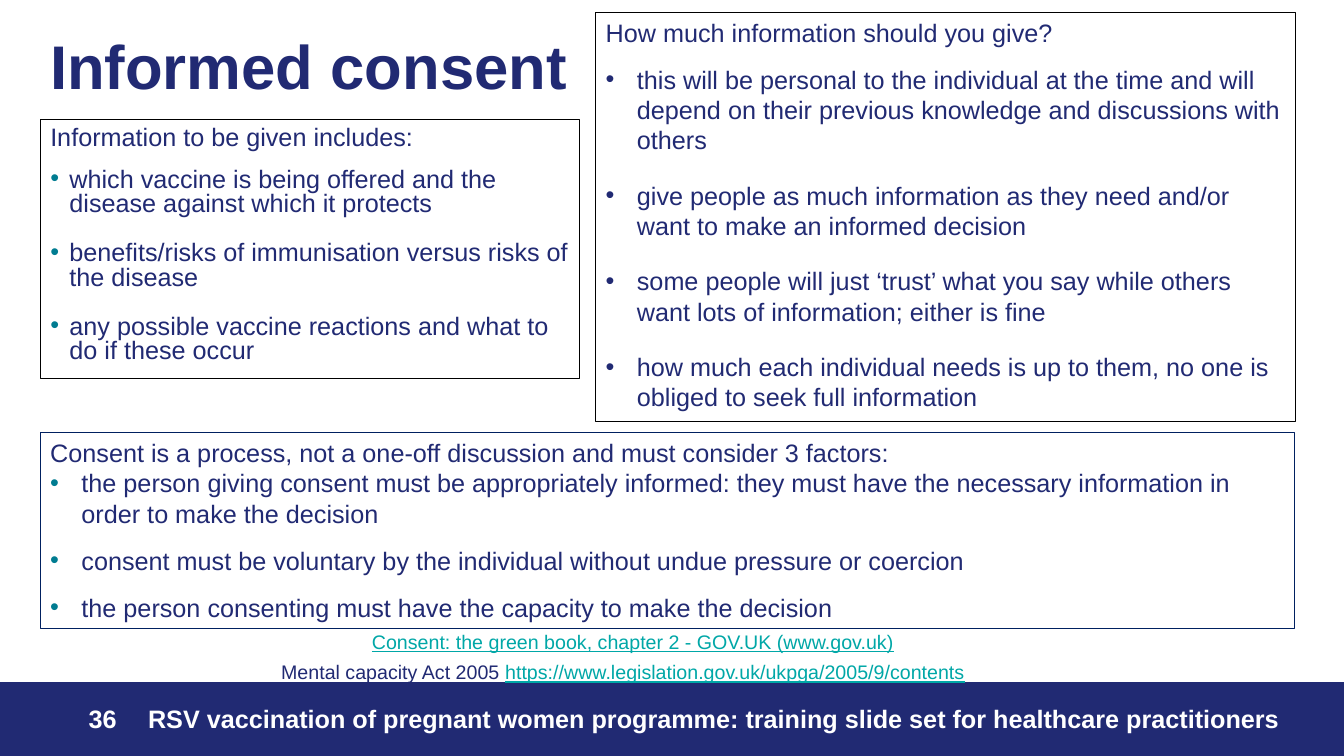
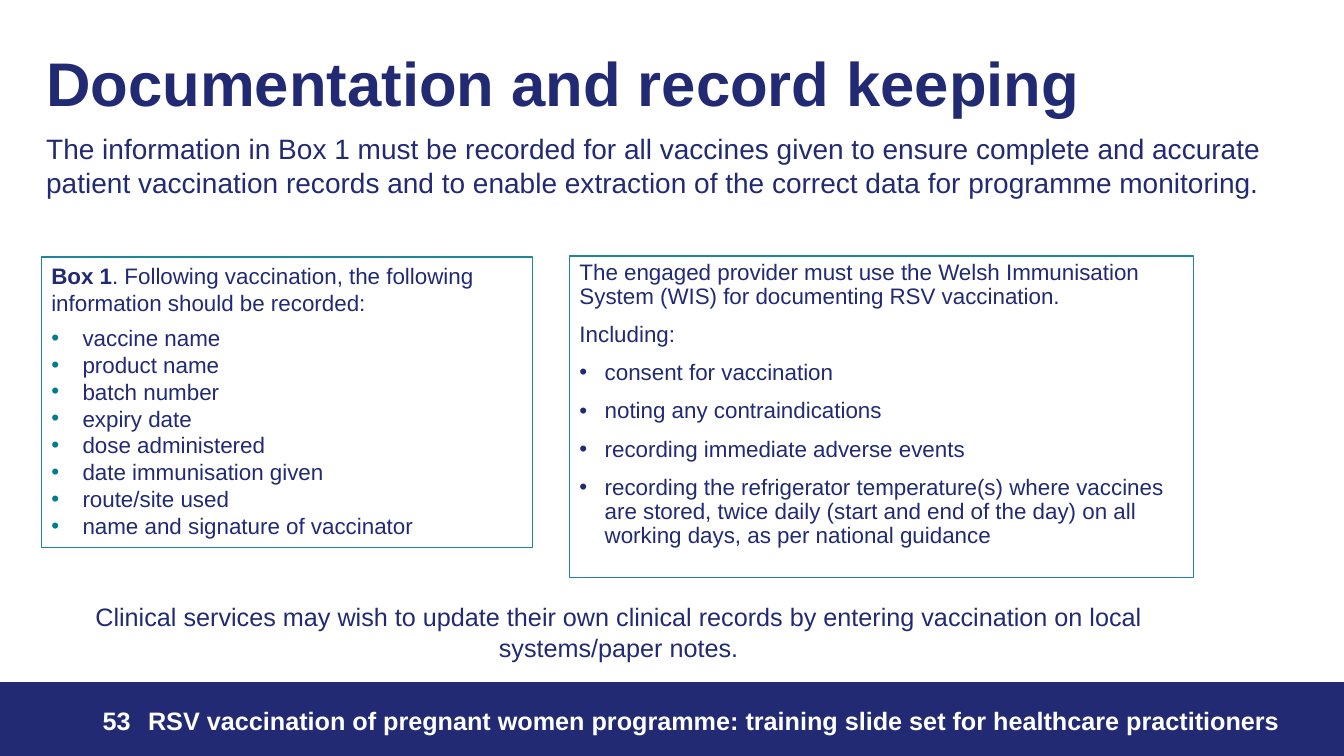
from dataclasses import dataclass
from typing import NamedTuple, Optional

from lxml import etree
from pptx import Presentation
from pptx import util as u
from pptx.dml.color import RGBColor
from pptx.enum import shapes, text
from pptx.oxml import ns

NAVY = RGBColor(0x21, 0x2A, 0x73)
WHITE = RGBColor(0xFF, 0xFF, 0xFF)
BLACK = RGBColor(0x00, 0x00, 0x00)
DEEP_BLUE = RGBColor(0x00, 0x20, 0x60)
BULLET_TEAL = RGBColor(0x00, 0x7C, 0x91)
BORDER_TEAL = RGBColor(0x1E, 0x88, 0x98)
LINK_TEAL = RGBColor(0x00, 0xA7, 0xA7)

FONT = "Arial"
SLIDE_WIDTH = u.Inches(13.33)
SLIDE_HEIGHT = u.Inches(7.5)
FOOTER_TEXT = ("RSV vaccination of pregnant women programme: "
               "training slide set for healthcare practitioners")


class Area(NamedTuple):
    """Place and size in percent of the slide's width and height."""
    left: float
    top: float
    width: float
    height: float

    def lengths(self) -> tuple[int, ...]:
        sides = (SLIDE_WIDTH, SLIDE_HEIGHT) * 2
        return tuple(round(share * side / 100) for share, side in zip(self, sides))


class Border(NamedTuple):
    color: RGBColor
    points: float


class Style(NamedTuple):
    size: int
    color: RGBColor = NAVY
    bold: bool = False
    underline: bool = False
    line_spacing: float = 1.0
    before: int = 0
    after: int = 0
    indent: float = 0
    bullet: Optional[RGBColor] = None
    centred: bool = False


class Span(NamedTuple):
    words: str
    bold: bool = False
    link: bool = False


@dataclass
class Para:
    style: Style
    content: str | list[Span]


@dataclass
class Panel:
    area: Area
    paras: list[Para]
    border: Optional[Border] = None
    anchor: text.MSO_ANCHOR = text.MSO_ANCHOR.TOP


@dataclass
class Page:
    number: str
    number_left: float
    footer_top: float
    panels: list[Panel]


TITLE = Style(44, bold=True, line_spacing=0.9)
FOOTER = Style(18, WHITE, bold=True)
BODY = Style(18)
LINK = Style(14, LINK_TEAL, underline=True)
BAND = Area(0, 90.27, 100, 9.73)


def items(style: Style, *lines: str) -> list[Para]:
    return [Para(style, line) for line in lines]


def title(area: Area, words: str) -> Panel:
    return Panel(area, items(TITLE, words), anchor=text.MSO_ANCHOR.MIDDLE)


def add_bullet(paragraph, style: Style) -> None:
    properties = paragraph._p.get_or_add_pPr()
    indent = u.Inches(style.indent)
    properties.set("marL", str(indent))
    properties.set("indent", str(-indent))
    color = etree.SubElement(properties, ns.qn("a:buClr"))
    etree.SubElement(color, ns.qn("a:srgbClr")).set("val", str(style.bullet))
    etree.SubElement(properties, ns.qn("a:buFont")).set("typeface", FONT)
    etree.SubElement(properties, ns.qn("a:buChar")).set("char", "•")


def write(paragraph, para: Para) -> None:
    style = para.style
    if style.bullet is not None:
        add_bullet(paragraph, style)
    paragraph.line_spacing = style.line_spacing
    paragraph.space_before = u.Pt(style.before)
    paragraph.space_after = u.Pt(style.after)
    paragraph.alignment = text.PP_ALIGN.CENTER if style.centred else text.PP_ALIGN.LEFT
    font = paragraph.font
    font.name, font.size = FONT, u.Pt(style.size)
    font.bold, font.underline = style.bold, style.underline
    font.color.rgb = style.color
    spans = [Span(para.content)] if isinstance(para.content, str) else para.content
    for span in spans:
        run = paragraph.add_run()
        run.text = span.words
        if span.bold:
            run.font.bold = True
        if span.link:
            run.font.underline = True
            run.font.color.rgb = LINK_TEAL


def draw_panel(slide, panel: Panel) -> None:
    place = panel.area.lengths()
    if panel.border:
        box = slide.shapes.add_shape(shapes.MSO_SHAPE.RECTANGLE, *place)
        box.shadow.inherit = False
        box.fill.background()
        box.line.color.rgb = panel.border.color
        box.line.width = u.Pt(panel.border.points)
    else:
        box = slide.shapes.add_textbox(*place)
    frame = box.text_frame
    frame.word_wrap = True
    frame.vertical_anchor = panel.anchor
    for index, para in enumerate(panel.paras):
        write(frame.add_paragraph() if index else frame.paragraphs[0], para)


def draw_footer(slide, page: Page) -> None:
    band = slide.shapes.add_shape(shapes.MSO_SHAPE.RECTANGLE, *BAND.lengths())
    band.shadow.inherit = False
    band.fill.solid()
    band.fill.fore_color.rgb = NAVY
    band.line.color.rgb = NAVY
    band.line.width = u.Pt(1)
    for left, width, words in ((page.number_left, 4.3, page.number),
                               (10.28, 87.1, FOOTER_TEXT)):
        draw_panel(slide, Panel(Area(left, page.footer_top, width, 5.33),
                                items(FOOTER, words)))


def consent_page() -> Page:
    given = Style(18, line_spacing=0.8, before=12, after=6,
                  indent=0.19, bullet=BULLET_TEAL)
    amount = Style(18, before=12, after=6, indent=0.31, bullet=NAVY)
    factor = Style(18, indent=0.31, bullet=BULLET_TEAL)
    return Page("36", 5.85, 92.4, [
        title(Area(3, 3.87, 86.27, 10.67), "Informed consent"),
        Panel(Area(3, 15.87, 40.13, 34.27), [
            Para(BODY._replace(line_spacing=0.9), "Information to be given includes:"),
            *items(given,
                   "which vaccine is being offered and the disease against which it protects",
                   "benefits/risks of immunisation versus risks of the disease",
                   "any possible vaccine reactions and what to do if these occur"),
        ], Border(BLACK, 0.75)),
        Panel(Area(44.33, 1.6, 52.07, 54.13), [
            Para(BODY, "How much information should you give?"),
            *items(amount,
                   "this will be personal to the individual at the time and will depend on "
                   "their previous knowledge and discussions with others",
                   "give people as much information as they need and/or want to make an "
                   "informed decision",
                   "some people will just ‘trust’ what you say while others want lots of "
                   "information; either is fine",
                   "how much each individual needs is up to them, no one is obliged to seek "
                   "full information"),
        ], Border(BLACK, 0.75)),
        Panel(Area(3, 57.2, 93.32, 26), [
            Para(BODY, "Consent is a process, not a one-off discussion and must consider "
                       "3 factors:"),
            Para(factor, "the person giving consent must be appropriately informed: they must "
                         "have the necessary information in order to make the decision"),
            *items(factor._replace(before=12),
                   "consent must be voluntary by the individual without undue pressure or "
                   "coercion",
                   "the person consenting must have the capacity to make the decision"),
        ], Border(DEEP_BLUE, 0.75)),
        Panel(Area(26.93, 82.67, 51.4, 4.53),
              items(LINK, "Consent: the green book, chapter 2 - GOV.UK (www.gov.uk)")),
        Panel(Area(20.18, 86.67, 78, 4.53), [
            Para(Style(14), [
                Span("Mental capacity Act 2005 "),
                Span("https://www.legislation.gov.uk/ukpga/2005/9/contents", link=True)]),
        ]),
    ])


def records_page() -> Page:
    small = Style(16)
    field = Style(16, indent=0.31, bullet=BULLET_TEAL)
    system = Style(16, line_spacing=0.9)
    duty = system._replace(before=10, indent=0.25, bullet=NAVY)
    border = Border(BORDER_TEAL, 1)
    return Page("53", 6.9, 92.67, [
        title(Area(2.7, 5.47, 86.27, 12), "Documentation and record keeping"),
        Panel(Area(2.7, 16.8, 91.9, 14.5), items(
            Style(20),
            "The information in Box 1 must be recorded for all vaccines given to ensure "
            "complete and accurate patient vaccination records and to enable extraction of "
            "the correct data for programme monitoring.")),
        Panel(Area(3.08, 34, 36.53, 38.4), [
            Para(small, [
                Span("Box 1", bold=True),
                Span(". Following vaccination, the following information should be recorded:")]),
            Para(field._replace(before=6), "vaccine name"),
            *items(field, "product name", "batch number", "expiry date", "dose administered",
                   "date immunisation given", "route/site used",
                   "name and signature of vaccinator"),
        ], border),
        Panel(Area(42.38, 33.87, 46.44, 42.53), [
            Para(system, "The engaged provider must use the Welsh Immunisation System (WIS) "
                         "for documenting RSV vaccination."),
            Para(system._replace(before=10), "Including:"),
            *items(duty, "consent for vaccination", "noting any contraindications",
                   "recording immediate adverse events",
                   "recording the refrigerator temperature(s) where vaccines are stored, "
                   "twice daily (start and end of the day) on all working days, as per "
                   "national guidance"),
        ], border),
        Panel(Area(3.08, 78.93, 85.9, 9.6), items(
            BODY._replace(centred=True),
            "Clinical services may wish to update their own clinical records by entering "
            "vaccination on local systems/paper notes.")),
    ])


def main() -> None:
    deck = Presentation()
    deck.slide_width, deck.slide_height = SLIDE_WIDTH, SLIDE_HEIGHT
    blank = deck.slide_layouts[6]
    for page in (consent_page(), records_page()):
        slide = deck.slides.add_slide(blank)
        draw_footer(slide, page)
        for panel in page.panels:
            draw_panel(slide, panel)
    deck.save("out.pptx")


if __name__ == "__main__":
    main()
